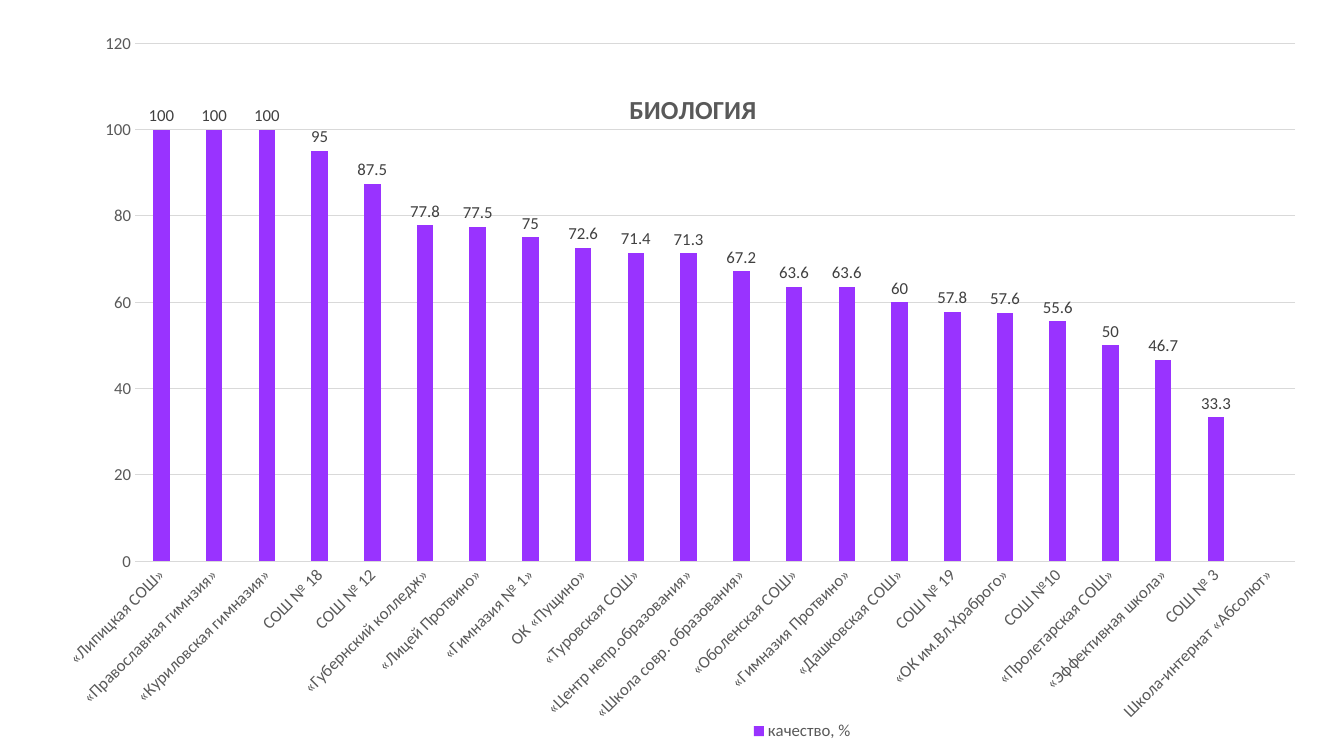
"""Build a slide with a column chart of biology results by school."""
from lxml.etree import SubElement
from pptx import Presentation
from pptx.chart.data import CategoryChartData
from pptx.dml.color import RGBColor
from pptx.enum.chart import XL_CHART_TYPE, XL_LABEL_POSITION, XL_LEGEND_POSITION, XL_TICK_MARK
from pptx.oxml import parse_xml
from pptx.oxml.ns import nsdecls, qn
from pptx.util import Inches, Pt

PURPLE = RGBColor(0x99, 0x33, 0xFF)
GRAY = RGBColor(0x59, 0x59, 0x59)
DARK = RGBColor(0x40, 0x40, 0x40)
PALE = RGBColor(0xD9, 0xD9, 0xD9)

SCHOOLS = [
    ("«Липицкая СОШ»", 100),
    ("«Православная гимнзия»", 100),
    ("«Куриловская гимназия»", 100),
    ("СОШ № 18", 95),
    ("СОШ № 12", 87.5),
    ("«Губернский колледж»", 77.8),
    ("«Лицей Протвино»", 77.5),
    ("«Гимназия № 1»", 75),
    ("ОК «Пущино»", 72.6),
    ("«Туровская СОШ»", 71.4),
    ("«Центр непр.образования»", 71.3),
    ("«Школа совр. образования»", 67.2),
    ("«Оболенская СОШ»", 63.6),
    ("«Гимназия Протвино»", 63.6),
    ("«Дашковская СОШ»", 60),
    ("СОШ № 19", 57.8),
    ("«ОК им.Вл.Храброго»", 57.6),
    ("СОШ №10", 55.6),
    ("«Пролетарская СОШ»", 50),
    ("«Эффективная школа»", 46.7),
    ("СОШ № 3", 33.3),
    ("Школа-интернат «Абсолют»", None),
]


def style(font, size, color, bold=False):
    for key, value in {"name": "Calibri", "size": Pt(size), "bold": bold}.items():
        setattr(font, key, value)
    font.color.rgb = color


def place(part, index, **parts):
    for old in part.findall(qn("c:layout")):
        part.remove(old)
    layout = parse_xml(f"<c:layout {nsdecls('c')}><c:manualLayout/></c:layout>")
    for tag, value in parts.items():
        SubElement(layout[0], qn(f"c:{tag}")).set("val", str(value))
    part.insert(index, layout)


deck = Presentation()
deck.slide_width, deck.slide_height = Inches(13.33), Inches(7.5)
slide = deck.slides.add_slide(deck.slide_layouts[6])

data = CategoryChartData()
data.categories = [name for name, score in SCHOOLS]
data.add_series("качество, %", [score for name, score in SCHOOLS])
chart = slide.shapes.add_chart(
    XL_CHART_TYPE.COLUMN_CLUSTERED,
    Inches(0.42), Inches(0.33), Inches(12.5), Inches(7.08), data,
).chart
style(chart.font, 10, RGBColor(0, 0, 0))

chart.has_title = True
title = chart.chart_title
title.text_frame.text = "БИОЛОГИЯ"
style(title.text_frame.paragraphs[0].runs[0].font, 18.6, GRAY, True)
for overlay in title._element.findall(qn("c:overlay")):
    overlay.set("val", "1")

chart.has_legend = True
legend = chart.legend
legend.position = XL_LEGEND_POSITION.BOTTOM
legend.include_in_layout = False
style(legend.font, 12, GRAY)

plot = chart.plots[0]
for key, value in {"gap_width": 219, "overlap": -27, "vary_by_categories": False,
                   "has_data_labels": True}.items():
    setattr(plot, key, value)
labels = plot.data_labels
labels.show_value = True
labels.position = XL_LABEL_POSITION.OUTSIDE_END
style(labels.font, 12, DARK)
fill = plot.series[0].format.fill
fill.solid()
fill.fore_color.rgb = PURPLE

schools, scores = chart.category_axis, chart.value_axis
for axis in (schools, scores):
    axis.major_tick_mark = axis.minor_tick_mark = XL_TICK_MARK.NONE
    style(axis.tick_labels.font, 12, GRAY)
schools._element.find(qn("c:txPr")).find(qn("a:bodyPr")).set("rot", "-2700000")
for key, value in {"minimum_scale": 0, "maximum_scale": 120, "major_unit": 20,
                   "has_major_gridlines": True}.items():
    setattr(scores, key, value)
scores.format.line.fill.background()
for line in (schools.format.line, scores.major_gridlines.format.line):
    line.color.rgb = PALE
    line.width = Pt(0.75)

area = chart._chartSpace.chart.plotArea
place(area, 0, layoutTarget="inner", xMode="edge", yMode="edge", x=0.0735, y=0.014, w=0.9205, h=0.726)
place(title._element, 1, xMode="edge", yMode="edge", x=0.462, y=0.074)
place(legend._element, 1, xMode="edge", yMode="edge", x=0.558, y=0.958, w=0.09, h=0.04)

deck.save("out.pptx")
